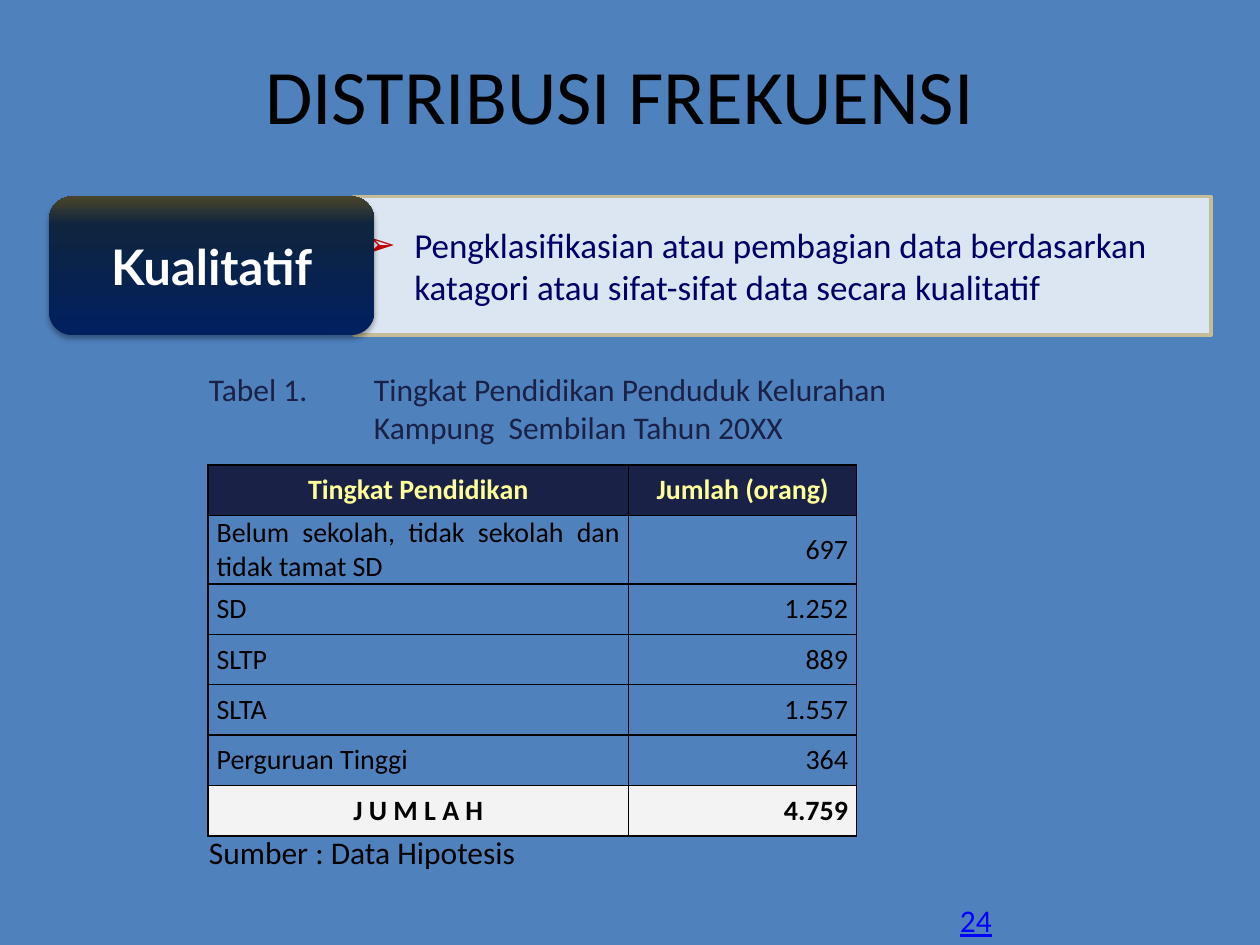
from dataclasses import dataclass
from typing import Optional

from lxml.etree import SubElement
from pptx import Presentation
from pptx.dml.color import RGBColor
from pptx.enum.shapes import MSO_SHAPE as Preset
from pptx.enum.text import MSO_ANCHOR as Anchor, MSO_AUTO_SIZE as AutoSize, PP_ALIGN as Align
from pptx.oxml.ns import qn
from pptx.util import Inches, Pt

COLUMNS, ROWS = 100, 75
BLACK, NAVY, PALE = "000000", "1A2146", "F3F3F3"
BODY_FONT = "Calibri"


@dataclass(frozen=True)
class Area:
    column: float
    row: float
    columns: float
    rows: float


@dataclass(frozen=True)
class TableRow:
    label: str
    amount: str
    rows: float = 4
    label_align: Align = Align.JUSTIFY
    amount_align: Align = Align.RIGHT
    color: str = BLACK
    bold: bool = False
    fill: Optional[str] = None


@dataclass(frozen=True)
class Label:
    area: Area
    lines: tuple
    size: float = 18
    color: str = BLACK
    align: Align = Align.LEFT
    hanging: float = 0
    underline: bool = False
    wrap: bool = True


LABELS = (
    Label(Area(75.2, 71, 4.6, 4), ("24",), color="0000FF", underline=True, wrap=False),
    Label(Area(6.7, 3.3, 85, 12.5), ("DISTRIBUSI FREKUENSI",), size=44, align=Align.CENTER),
    Label(Area(15.6, 28.9, 62.5, 7.1),
          ("Tabel 1. \tTingkat Pendidikan Penduduk Kelurahan",
           "\t\tKampung  Sembilan Tahun 20XX"),
          color=NAVY, hanging=8.1),
    Label(Area(15.6, 65.6, 28.1, 4), ("Sumber : Data Hipotesis",)),
)

TABLE_ORIGIN = (16.5, 36.9)
TABLE_COLUMNS = (33.4, 18.1)
TABLE_ROWS = (
    TableRow("Tingkat Pendidikan", "Jumlah (orang)", label_align=Align.CENTER,
             amount_align=Align.CENTER, color="FFFF99", bold=True, fill=NAVY),
    TableRow("Belum sekolah, tidak sekolah dan tidak tamat SD", "697", rows=5.2),
    TableRow("SD", "1.252"),
    TableRow("SLTP", "889"),
    TableRow("SLTA", "1.557"),
    TableRow("Perguruan Tinggi", "364"),
    TableRow("J U M L A H", "4.759", label_align=Align.CENTER, bold=True, fill=PALE),
)

presentation = Presentation()
presentation.slide_width = Inches(10)
presentation.slide_height = Inches(7.5)
slide = presentation.slides.add_slide(presentation.slide_layouts[6])


def across(columns: float) -> int:
    return round(presentation.slide_width * columns / COLUMNS)


def down(rows: float) -> int:
    return round(presentation.slide_height * rows / ROWS)


def place(area: Area) -> tuple:
    return across(area.column), down(area.row), across(area.columns), down(area.rows)


def rgb(color: str) -> RGBColor:
    return RGBColor.from_string(color)


def add_color(parent, color: str):
    return SubElement(parent, qn("a:srgbClr"), val=color)


def write(paragraph, text: str, *, size: float, color: str, font: str = BODY_FONT,
          bold: bool = False, underline: bool = False, align: Align = Align.LEFT,
          hanging: float = 0) -> None:
    paragraph.alignment = align
    if hanging:
        properties = paragraph._p.get_or_add_pPr()
        properties.set("marL", str(across(hanging)))
        properties.set("indent", str(-across(hanging)))
    run = paragraph.add_run()
    run.text = text
    run.font.name = font
    run.font.size = Pt(size)
    run.font.bold = bold
    run.font.underline = underline
    run.font.color.rgb = rgb(color)


def add_bullet(paragraph, character: str, color: str) -> None:
    properties = paragraph._p.get_or_add_pPr()
    add_color(SubElement(properties, qn("a:buClr")), color)
    SubElement(properties, qn("a:buFont"), typeface="Arial")
    SubElement(properties, qn("a:buChar"), char=character)


def draw_label(label: Label) -> None:
    frame = slide.shapes.add_textbox(*place(label.area)).text_frame
    frame.word_wrap = label.wrap
    frame.auto_size = AutoSize.NONE
    for index, line in enumerate(label.lines):
        paragraph = frame.add_paragraph() if index else frame.paragraphs[0]
        write(paragraph, line, size=label.size, color=label.color, align=label.align,
              underline=label.underline, hanging=label.hanging)


def add_panel(preset: Preset, area: Area):
    shape = slide.shapes.add_shape(preset, *place(area))
    shape.shadow.inherit = False
    shape.text_frame.word_wrap = True
    shape.text_frame.vertical_anchor = Anchor.MIDDLE
    return shape


def draw_definition(area: Area) -> None:
    shape = add_panel(Preset.RECTANGLE, area)
    shape.fill.solid()
    shape.fill.fore_color.rgb = rgb("DCE6F2")
    shape.line.color.rgb = rgb("C4BD97")
    shape.line.width = Pt(2)
    paragraph = shape.text_frame.paragraphs[0]
    write(paragraph, "Pengklasifikasian atau pembagian data berdasarkan katagori "
          "atau sifat-sifat data secara kualitatif",
          size=20, color="000066", hanging=3.8)
    add_bullet(paragraph, "➢", "C00000")


def draw_category(area: Area) -> None:
    shape = add_panel(Preset.ROUNDED_RECTANGLE, area)
    shape.line.fill.background()
    shape.fill.gradient()
    shape.fill.gradient_angle = 90
    properties = shape._element.spPr
    stops = properties.find(qn("a:gradFill")).find(qn("a:gsLst"))
    for stop in list(stops):
        stops.remove(stop)
    for share, color in ((0, "002060"), (80, "0F243E"), (100, "4A452A")):
        add_color(SubElement(stops, qn("a:gs"), pos=str(share * 1000)), color)
    shadow = SubElement(properties.find(qn("a:effectLst")), qn("a:outerShdw"),
                        blurRad=str(Pt(3.1)), dist=str(Pt(1.8)), dir="5400000",
                        rotWithShape="0")
    SubElement(add_color(shadow, BLACK), qn("a:alpha"), val="35000")
    write(shape.text_frame.paragraphs[0], "Kualitatif", size=28, color="FFFFFF",
          font="Lato", bold=True, align=Align.CENTER)


def draw_cell(cell, text: str, align: Align, row: TableRow) -> None:
    cell.margin_left = cell.margin_right = across(0.7)
    cell.margin_top = cell.margin_bottom = 0
    cell.vertical_anchor = Anchor.MIDDLE
    properties = cell._tc.get_or_add_tcPr()
    for side in ("lnL", "lnR", "lnT", "lnB"):
        border = SubElement(properties, qn(f"a:{side}"), w=str(Pt(1)))
        add_color(SubElement(border, qn("a:solidFill")), BLACK)
    if row.fill:
        cell.fill.solid()
        cell.fill.fore_color.rgb = rgb(row.fill)
    else:
        cell.fill.background()
    write(cell.text_frame.paragraphs[0], text, size=16, color=row.color,
          bold=row.bold, align=align)


def draw_table(rows: tuple) -> None:
    area = Area(*TABLE_ORIGIN, sum(TABLE_COLUMNS), sum(row.rows for row in rows))
    table = slide.shapes.add_table(len(rows), len(TABLE_COLUMNS), *place(area)).table
    table.first_row = table.horz_banding = False
    for column, width in zip(table.columns, TABLE_COLUMNS):
        column.width = across(width)
    for index, row in enumerate(rows):
        table.rows[index].height = down(row.rows)
        draw_cell(table.cell(index, 0), row.label, row.label_align, row)
        draw_cell(table.cell(index, 1), row.amount, row.amount_align, row)


def main() -> None:
    slide.background.fill.solid()
    slide.background.fill.fore_color.rgb = rgb("4F81BD")
    draw_definition(Area(28.1, 15.6, 68, 11))
    draw_category(Area(3.9, 15.6, 25.8, 11))
    draw_table(TABLE_ROWS)
    for label in LABELS:
        draw_label(label)
    presentation.save("out.pptx")


if __name__ == "__main__":
    main()
